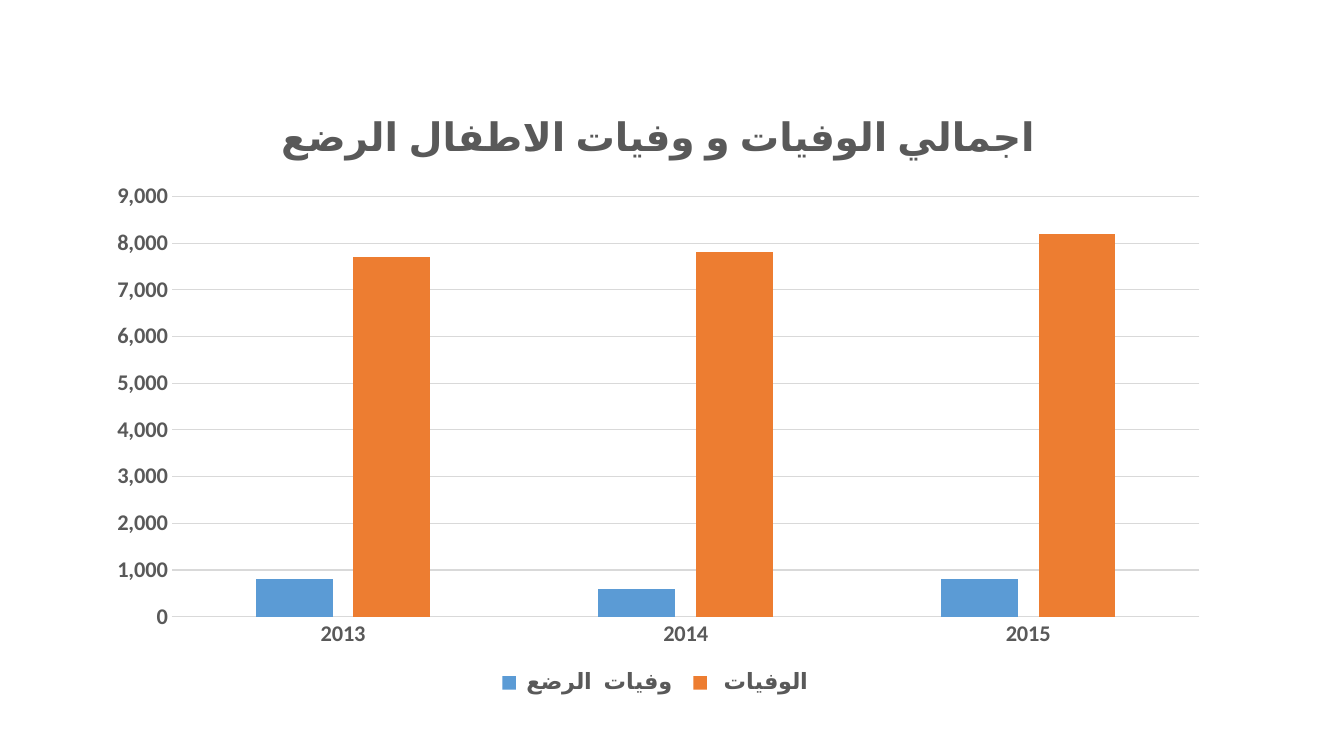
import pptx
import pptx.util
import pptx.chart.data
import pptx.dml.color
import pptx.enum.chart

Inches = pptx.util.Inches
Pt = pptx.util.Pt
RGBColor = pptx.dml.color.RGBColor

GREY = RGBColor(0x59, 0x59, 0x59)
PALE = RGBColor(0xD9, 0xD9, 0xD9)
BLUE = RGBColor(0x5B, 0x9B, 0xD5)
ORANGE = RGBColor(0xED, 0x7D, 0x31)


def style(font, size):
    font.name = "Calibri"
    font.size = Pt(size)
    font.bold = True
    font.color.rgb = GREY


deck = pptx.Presentation()
deck.slide_width = Inches(13.33)
deck.slide_height = Inches(7.5)
slide = deck.slides.add_slide(deck.slide_layouts[6])

# Deaths by year
data = pptx.chart.data.CategoryChartData(number_format="#,##0")
data.categories = ["2013", "2014", "2015"]
data.add_series(" وفيات  الرضع ", [800, 600, 800])
data.add_series("  الوفيات ", [7700, 7800, 8200])
chart = slide.shapes.add_chart(
    pptx.enum.chart.XL_CHART_TYPE.COLUMN_CLUSTERED,
    Inches(0.94), Inches(0.9), Inches(11.18), Inches(6.03), data).chart
style(chart.font, 16)

# Title
chart.has_title = True
title = chart.chart_title
title.include_in_layout = False
title.text_frame.text = "اجمالي الوفيات و وفيات الاطفال الرضع"
style(title.text_frame.paragraphs[0].runs[0].font, 28)

# Columns
plot = chart.plots[0]
plot.gap_width = 219
plot.overlap = -27
plot.vary_by_categories = False
for series, color in zip(plot.series, [BLUE, ORANGE]):
    series.format.fill.solid()
    series.format.fill.fore_color.rgb = color

# Axes and grid
years = chart.category_axis
count = chart.value_axis
for axis in [years, count]:
    axis.major_tick_mark = pptx.enum.chart.XL_TICK_MARK.NONE
    axis.minor_tick_mark = pptx.enum.chart.XL_TICK_MARK.NONE
    style(axis.tick_labels.font, 16)
count.minimum_scale = 0
count.maximum_scale = 9000
count.major_unit = 1000
count.tick_labels.number_format = "#,##0"
count.tick_labels.number_format_is_linked = False
count.format.line.fill.background()
count.has_major_gridlines = True
for line in [years.format.line, count.major_gridlines.format.line]:
    line.color.rgb = PALE
    line.width = Pt(0.75)

# Legend
chart.has_legend = True
chart.legend.position = pptx.enum.chart.XL_LEGEND_POSITION.BOTTOM
chart.legend.include_in_layout = False
style(chart.legend.font, 16)

deck.save("out.pptx")
